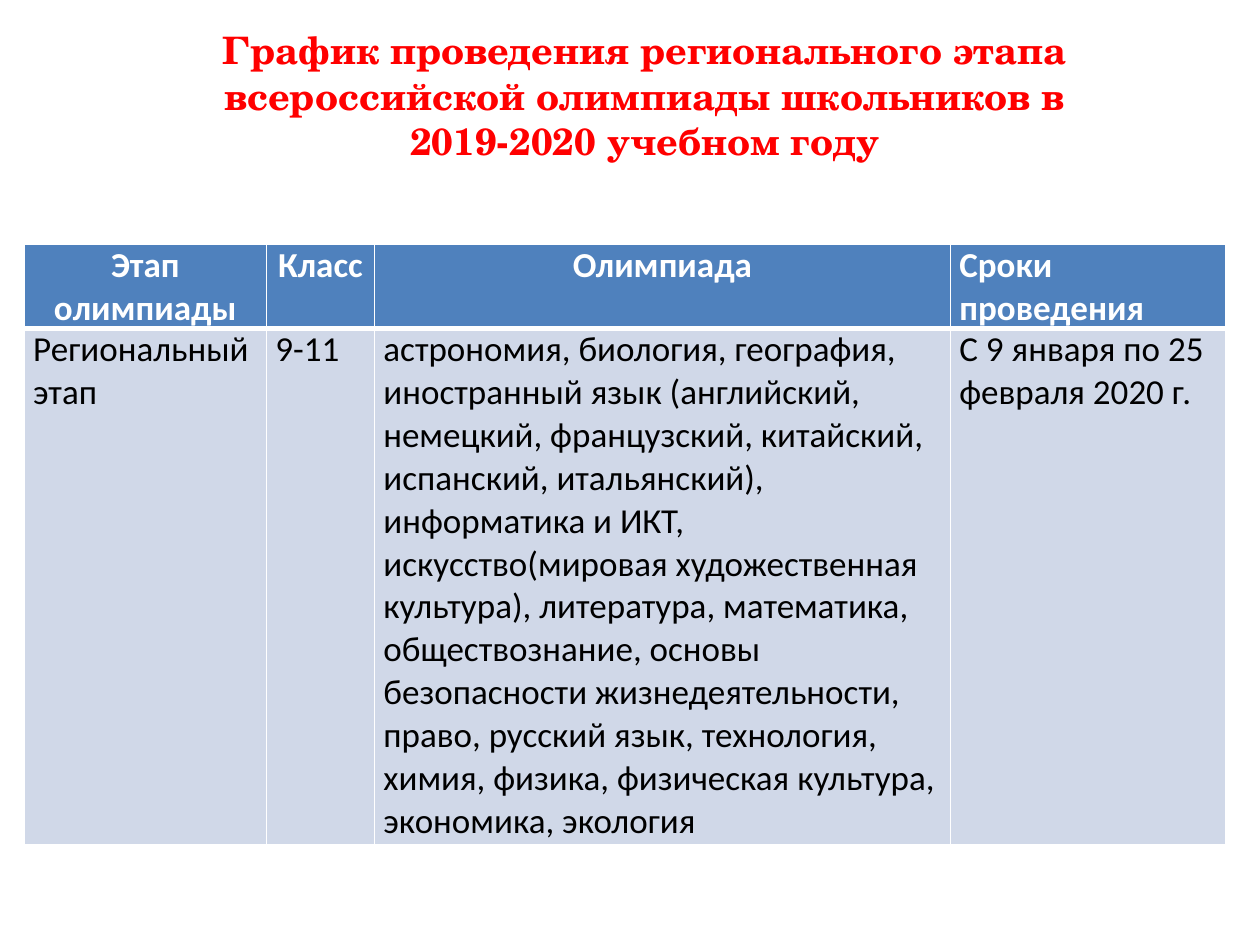
"""Build a slide with the schedule of the regional school olympiad."""
import pptx
import pptx.dml.color
import pptx.enum.text
import pptx.oxml
import pptx.oxml.ns
import pptx.util

Cm = pptx.util.Cm
Pt = pptx.util.Pt
RGB = pptx.dml.color.RGBColor
ALIGN = pptx.enum.text.PP_ALIGN
MIDDLE = pptx.enum.text.MSO_ANCHOR.MIDDLE

RED = RGB(0xFF, 0x00, 0x00)
WHITE = RGB(0xFF, 0xFF, 0xFF)
BLACK = RGB(0x00, 0x00, 0x00)
BLUE = RGB(0x4F, 0x81, 0xBD)
PALE = RGB(0xD0, 0xD8, 0xE8)

TITLE = ("График проведения регионального этапа всероссийской олимпиады "
         "школьников в 2019-2020 учебном году")
HEAD = ["Этап олимпиады", "Класс", "Олимпиада", "Сроки проведения"]
BODY = [
    "Региональный этап",
    "9-11",
    "астрономия, биология, география, иностранный язык (английский, "
    "немецкий, французский, китайский, испанский, итальянский), "
    "информатика и ИКТ, искусство(мировая художественная культура), "
    "литература, математика, обществознание, основы безопасности "
    "жизнедеятельности, право, русский язык, технология, химия, физика, "
    "физическая культура, экономика, экология",
    "С 9 января по 25 февраля 2020 г.",
]
WIDTHS = [4.88, 2.18, 11.61, 5.56]
HEIGHTS = [1.7, 10.4]

TITLE_FONT = {"name": "TeX Gyre Schola", "size": Pt(21.6), "bold": True}
HEAD_FONT = {"name": "Calibri", "size": Pt(20), "bold": True}
BODY_FONT = {"name": "Calibri", "size": Pt(20), "bold": False}
INSETS = {"margin_left": Cm(0.18), "margin_right": Cm(0.18),
          "margin_top": 0, "margin_bottom": 0}


def apply(item, values):
    """Set each attribute of item from the dict."""
    for name, value in values.items():
        setattr(item, name, value)


def write(frame, text, font, color, align):
    """Put one formatted paragraph in the text frame."""
    para = frame.paragraphs[0]
    para.alignment = align
    run = para.add_run()
    run.text = text
    apply(run.font, font)
    run.font.color.rgb = color


def add_title(slide):
    """Add the centred red title."""
    box = slide.shapes.add_textbox(Cm(4.1), Cm(0.33), Cm(17.8), Cm(3.18))
    apply(box.text_frame, {"word_wrap": True, "vertical_anchor": MIDDLE})
    write(box.text_frame, TITLE, TITLE_FONT, RED, ALIGN.CENTER)


def rule(cell, side, width):
    """Draw a white border on one side of the cell."""
    line = pptx.oxml.parse_xml(
        f'<a:{side} {pptx.oxml.ns.nsdecls("a")} w="{width}"><a:solidFill>'
        f'<a:srgbClr val="{WHITE}"/></a:solidFill></a:{side}>')
    cell._tc.get_or_add_tcPr().insert(0, line)


def fill_row(row, texts, fill, font, color, aligns, side):
    """Fill and format one table row, with a thick rule on one side."""
    for cell, text, align in zip(row.cells, texts, aligns):
        apply(cell, INSETS)
        cell.fill.solid()
        cell.fill.fore_color.rgb = fill
        rule(cell, side, Pt(3))
        write(cell.text_frame, text, font, color, align)


def add_plan(slide):
    """Add the table of stages, grades, subjects and dates."""
    frame = slide.shapes.add_table(
        len(HEIGHTS), len(WIDTHS), Cm(0.49), Cm(4.92),
        Cm(sum(WIDTHS)), Cm(sum(HEIGHTS)))
    table = frame.table
    for column, width in zip(table.columns, WIDTHS):
        column.width = Cm(width)
    for row, height in zip(table.rows, HEIGHTS):
        row.height = Cm(height)
    head, body = table.rows
    fill_row(head, HEAD, BLUE, HEAD_FONT, WHITE,
             [ALIGN.CENTER] * 3 + [ALIGN.LEFT], "lnB")
    fill_row(body, BODY, PALE, BODY_FONT, BLACK, [ALIGN.LEFT] * 4, "lnT")


def main():
    """Build and save the slide."""
    deck = pptx.Presentation()
    apply(deck, {"slide_width": Cm(25.4), "slide_height": Cm(19.05)})
    slide = deck.slides.add_slide(deck.slide_layouts[6])
    add_title(slide)
    add_plan(slide)
    deck.save("out.pptx")


if __name__ == "__main__":
    main()
